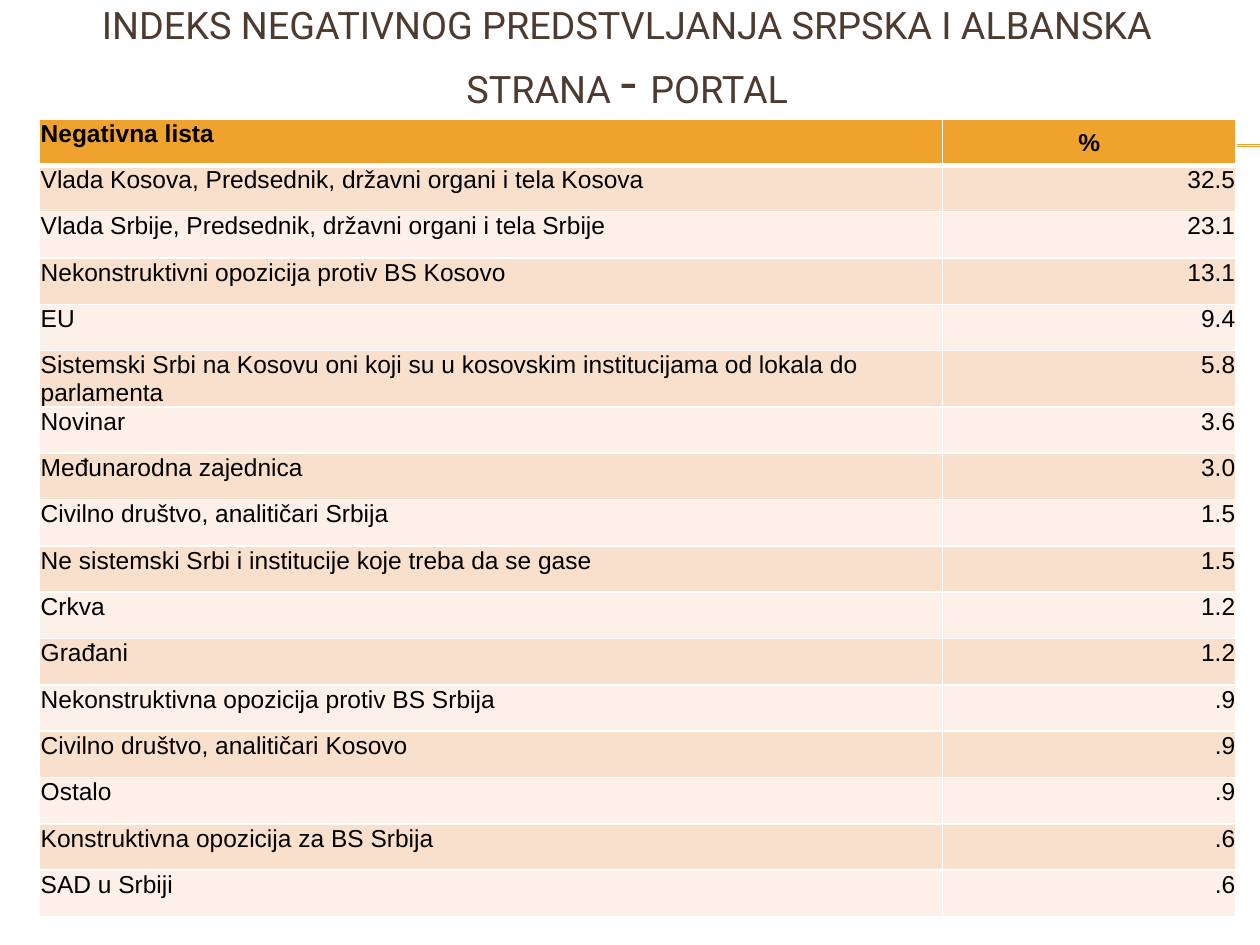
import pptx
import pptx.util
from lxml import etree
from pptx.dml.color import RGBColor
from pptx.enum.shapes import MSO_CONNECTOR
from pptx.enum.text import MSO_ANCHOR, PP_ALIGN
from pptx.oxml.ns import qn
from pptx.util import Cm, Pt

# Content
TITLE = [
    ("INDEKS NEGATIVNOG PREDSTVLJANJA SRPSKA I ALBANSKA STRANA ", 21.6),
    ("- ", 32.4),
    ("PORTAL", 21.6),
]
ROWS = [
    ("Negativna lista", "%"),
    ("Vlada Kosova, Predsednik, državni organi i tela Kosova", "32.5"),
    ("Vlada Srbije, Predsednik, državni organi i tela Srbije", "23.1"),
    ("Nekonstruktivni opozicija protiv BS Kosovo", "13.1"),
    ("EU", "9.4"),
    ("Sistemski Srbi na Kosovu oni koji su u kosovskim institucijama "
     "od lokala do parlamenta", "5.8"),
    ("Novinar", "3.6"),
    ("Međunarodna zajednica", "3.0"),
    ("Civilno društvo, analitičari Srbija", "1.5"),
    ("Ne sistemski Srbi i institucije koje treba da se gase", "1.5"),
    ("Crkva", "1.2"),
    ("Građani", "1.2"),
    ("Nekonstruktivna opozicija protiv BS Srbija", ".9"),
    ("Civilno društvo, analitičari Kosovo", ".9"),
    ("Ostalo", ".9"),
    ("Konstruktivna opozicija za BS Srbija", ".6"),
    ("SAD u Srbiji", ".6"),
]

# Style and measures in centimetres
ORANGE, BROWN, WHITE, BLACK = "F0A22E", "4E3B30", "FFFFFF", "000000"
BANDS = ("FCF0E8", "F9E0CD")
TABLE_LEFT, TABLE_TOP, TABLE_HEIGHT = 0.8, 2.4, 16.07
COLUMN_WIDTHS = (18.2, 5.92)
TWO_LINE_ROW, TWO_LINE_HEIGHT = 5, 1.12
ROW_HEIGHT = (TABLE_HEIGHT - TWO_LINE_HEIGHT) / (len(ROWS) - 1)
RULE_LEFT, RULE_TOPS = 1.42, (2.92, 2.95)


def color(value):
    return RGBColor.from_string(value)


def set_border(cell, side, width):
    line = etree.SubElement(cell._tc.get_or_add_tcPr(), qn("a:ln" + side),
                            w=str(Pt(width)))
    fill = etree.SubElement(line, qn("a:solidFill"))
    etree.SubElement(fill, qn("a:srgbClr"), val=WHITE)


def format_cell(cell, text, row, column):
    header = row == 0
    # Borders come before the fill in the cell properties
    for side in "LRTB":
        thick = (row, side) in ((0, "B"), (1, "T"))
        set_border(cell, side, 3 if thick else 1)
    cell.fill.solid()
    cell.fill.fore_color.rgb = color(ORANGE if header else BANDS[row % 2])
    cell.margin_left = cell.margin_right = cell.margin_top = Cm(0.02)
    cell.margin_bottom = 0
    cell.vertical_anchor = MSO_ANCHOR.MIDDLE if header and column else MSO_ANCHOR.TOP
    cell.text = text
    para = cell.text_frame.paragraphs[0]
    if column:
        para.alignment = PP_ALIGN.CENTER if header else PP_ALIGN.RIGHT
    para.font.name, para.font.size, para.font.bold = "Arial", Pt(14), header
    para.font.color.rgb = color(BLACK)


deck = pptx.Presentation()
deck.slide_width, deck.slide_height = Cm(25.4), Cm(19.05)
page = deck.slides.add_slide(deck.slide_layouts[5])

# Title
title = page.shapes.title
title.left, title.top, title.width, title.height = Cm(0.58), 0, Cm(24.13), Cm(2.34)
title.text_frame.vertical_anchor = MSO_ANCHOR.MIDDLE
title.text_frame.word_wrap = True
para = title.text_frame.paragraphs[0]
para.alignment = PP_ALIGN.CENTER
para.font.name = "Roboto"
para.font.color.rgb = color(BROWN)
for text, size in TITLE:
    span = para.add_run()
    span.text = text
    span.font.size = Pt(size)

# Double rule running to the right edge behind the table
for top in RULE_TOPS:
    rule = page.shapes.add_connector(MSO_CONNECTOR.STRAIGHT, Cm(RULE_LEFT), Cm(top),
                                     deck.slide_width, Cm(top))
    rule.line.color.rgb = color(ORANGE)
    rule.line.width = Pt(0.75)
    etree.SubElement(rule._element.spPr, qn("a:effectLst"))

# Table
table = page.shapes.add_table(len(ROWS), len(COLUMN_WIDTHS), Cm(TABLE_LEFT), Cm(TABLE_TOP),
                              Cm(sum(COLUMN_WIDTHS)), Cm(TABLE_HEIGHT)).table
for column, width in enumerate(COLUMN_WIDTHS):
    table.columns[column].width = Cm(width)
for row, texts in enumerate(ROWS):
    table.rows[row].height = Cm(TWO_LINE_HEIGHT if row == TWO_LINE_ROW else ROW_HEIGHT)
    for column, text in enumerate(texts):
        format_cell(table.cell(row, column), text, row, column)

deck.save("out.pptx")
